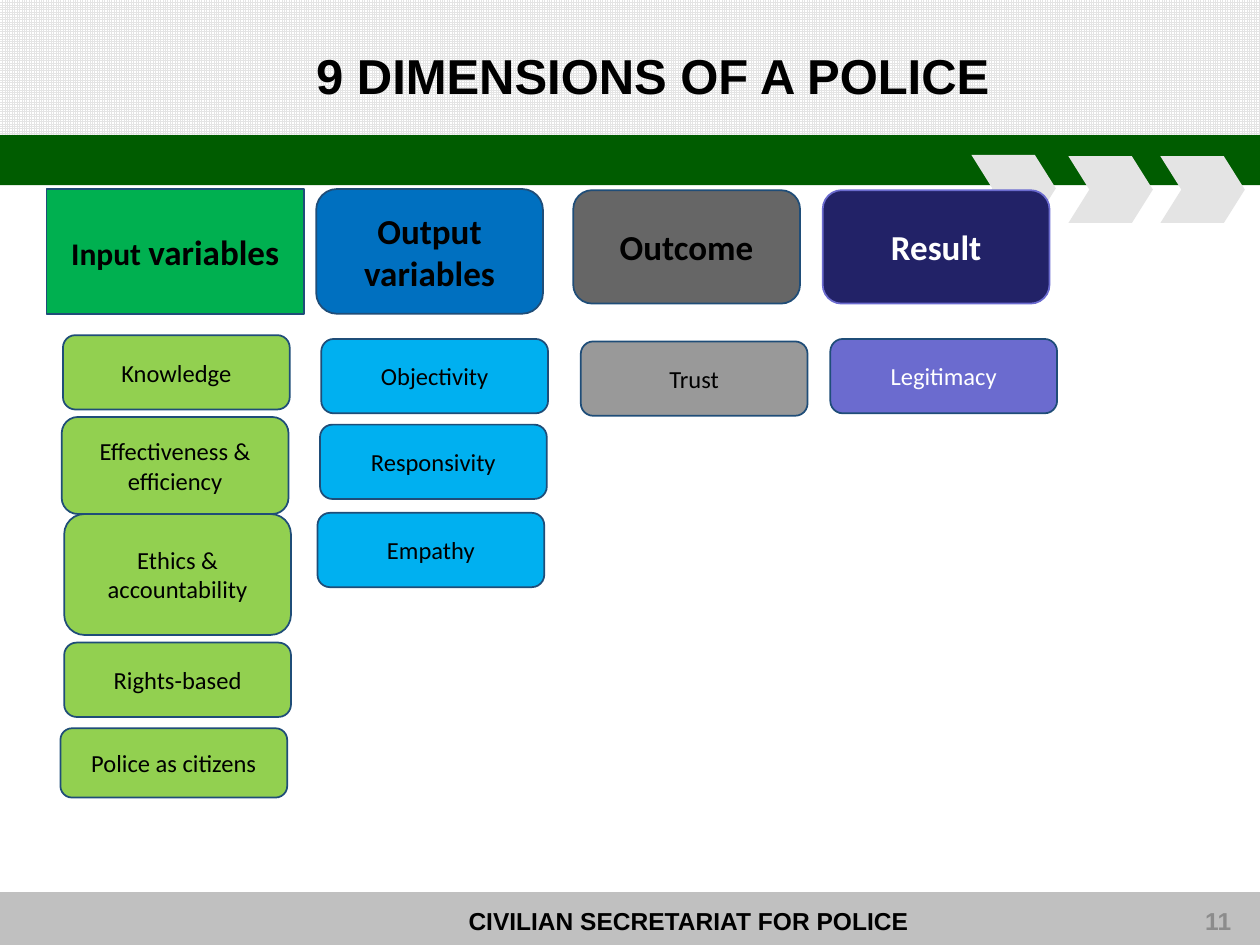
from pptx import Presentation
from pptx.dml.color import RGBColor
from pptx.enum.dml import MSO_PATTERN
from pptx.enum.shapes import MSO_SHAPE
from pptx.enum.text import MSO_ANCHOR, PP_ALIGN
from pptx.util import Inches, Pt

BLACK, WHITE = "000000", "FFFFFF"
NAVY_LINE = "1F4D78"
PALE_GREY = "E4E4E4"
BOX_WIDTH = 1.8

# left, top, width, height, corner, fill, line, text colour, (text, size) runs
HEADINGS = [
    (0.37, 1.5, 2.04, 0.99, 0, "00B050", NAVY_LINE, BLACK,
     [("Input ", 18), ("variables", 20)]),
    (2.51, 1.5, BOX_WIDTH, 0.99, 0.167, "0070C0", NAVY_LINE, BLACK,
     [("Output", 20), (" ", 14), ("variables", 20)]),
    (4.55, 1.51, BOX_WIDTH, 0.9, 0.167, "666666", NAVY_LINE, BLACK,
     [("Outcome", 20)]),
    (6.53, 1.51, BOX_WIDTH, 0.9, 0.167, "222267", "6B6BCF", WHITE,
     [("Result", 20)]),
]

# fill, text colour, (text, left, top, height) of each dimension
DIMENSIONS = [
    ("92D050", BLACK, [
        ("Knowledge", 0.5, 2.66, 0.59),
        ("Effectiveness & efficiency", 0.49, 3.31, 0.77),
        ("Ethics & accountability", 0.51, 4.08, 0.96),
        ("Rights-based", 0.51, 5.1, 0.59),
        ("Police as citizens", 0.48, 5.78, 0.55),
    ]),
    ("00B0F0", BLACK, [
        ("Objectivity", 2.55, 2.69, 0.59),
        ("Responsivity", 2.54, 3.37, 0.59),
        ("Empathy", 2.52, 4.07, 0.59),
    ]),
    ("999999", BLACK, [("Trust", 4.61, 2.71, 0.59)]),
    ("6B6BCF", WHITE, [("Legitimacy", 6.59, 2.69, 0.59)]),
]


def rgb(value):
    return RGBColor.from_string(value)


def format_run(run, font_name, size, color, bold):
    run.font.name = font_name
    run.font.size = Pt(size)
    run.font.bold = bold
    run.font.color.rgb = rgb(color)


def add_block(slide, preset, left, top, width, height, fill):
    """Add a filled shape without outline or shadow."""
    block = slide.shapes.add_shape(
        preset, Inches(left), Inches(top), Inches(width), Inches(height))
    block.shadow.inherit = False
    block.fill.solid()
    block.fill.fore_color.rgb = rgb(fill)
    block.line.fill.background()
    return block


def add_banner(slide):
    add_block(slide, MSO_SHAPE.RECTANGLE, 0, 7.08, 10, 0.42, "C0C0C0")
    add_block(slide, MSO_SHAPE.RECTANGLE, 0, 1.07, 10, 0.4, "005C00")
    for left, top in [(8.48, 1.24), (9.21, 1.24), (7.71, 1.23)]:
        chevron = add_block(slide, MSO_SHAPE.CHEVRON, left, top, 0.67, 0.53,
                            PALE_GREY)
        chevron.adjustments[0] = 0.314
    header = add_block(slide, MSO_SHAPE.RECTANGLE, 0, 0, 10, 1.07, WHITE)
    header.fill.patterned()
    header.fill.pattern = MSO_PATTERN.SMALL_GRID
    header.fill.fore_color.rgb = rgb(PALE_GREY)
    header.fill.back_color.rgb = rgb(WHITE)


def add_box(slide, left, top, width, height, corner, fill, line, color, runs,
            bold=False):
    """Add an outlined rounded box with centred text."""
    box = add_block(slide, MSO_SHAPE.ROUNDED_RECTANGLE, left, top, width,
                    height, fill)
    box.adjustments[0] = corner
    box.line.color.rgb = rgb(line)
    box.line.width = Pt(1)
    box.text_frame.word_wrap = True
    box.text_frame.vertical_anchor = MSO_ANCHOR.MIDDLE
    paragraph = box.text_frame.paragraphs[0]
    paragraph.alignment = PP_ALIGN.CENTER
    for text, size in runs:
        run = paragraph.add_run()
        run.text = text
        format_run(run, "Calibri", size, color, bold)


def add_label(slide, text, left, width, height, color, align, wrap):
    label = slide.shapes.add_textbox(
        Inches(left), Inches(7.14), Inches(width), Inches(height))
    label.text_frame.word_wrap = wrap
    label.text_frame.text = text
    paragraph = label.text_frame.paragraphs[0]
    paragraph.alignment = align
    format_run(paragraph.runs[0], "Arial", 14, color, True)


def set_title(slide, text):
    title = slide.shapes.title
    title.left, title.top = Inches(0.67), Inches(0.31)
    title.width, title.height = Inches(9.13), Inches(0.57)
    title.text_frame.text = text
    title.text_frame.vertical_anchor = MSO_ANCHOR.TOP
    paragraph = title.text_frame.paragraphs[0]
    paragraph.alignment = PP_ALIGN.CENTER
    format_run(paragraph.runs[0], "Arial", 28, BLACK, True)
    # The title must lie in front of the patterned header
    slide.shapes._spTree.append(title._element)


def main():
    presentation = Presentation()
    presentation.slide_width = Inches(10)
    presentation.slide_height = Inches(7.5)
    slide = presentation.slides.add_slide(presentation.slide_layouts[5])

    add_banner(slide)
    add_label(slide, "CIVILIAN SECRETARIAT FOR POLICE", 3.62, 3.72, 0.34,
              BLACK, PP_ALIGN.LEFT, False)
    add_label(slide, "11", 7.54, 2.33, 0.52, "8C8C8C", PP_ALIGN.RIGHT, True)
    for heading in HEADINGS:
        add_box(slide, *heading, bold=True)
    for fill, color, boxes in DIMENSIONS:
        for text, left, top, height in boxes:
            add_box(slide, left, top, BOX_WIDTH, height, 0.167, fill,
                    NAVY_LINE, color, [(text, 14)])
    set_title(slide, "9 DIMENSIONS OF A POLICE ")

    presentation.save("out.pptx")


if __name__ == "__main__":
    main()
